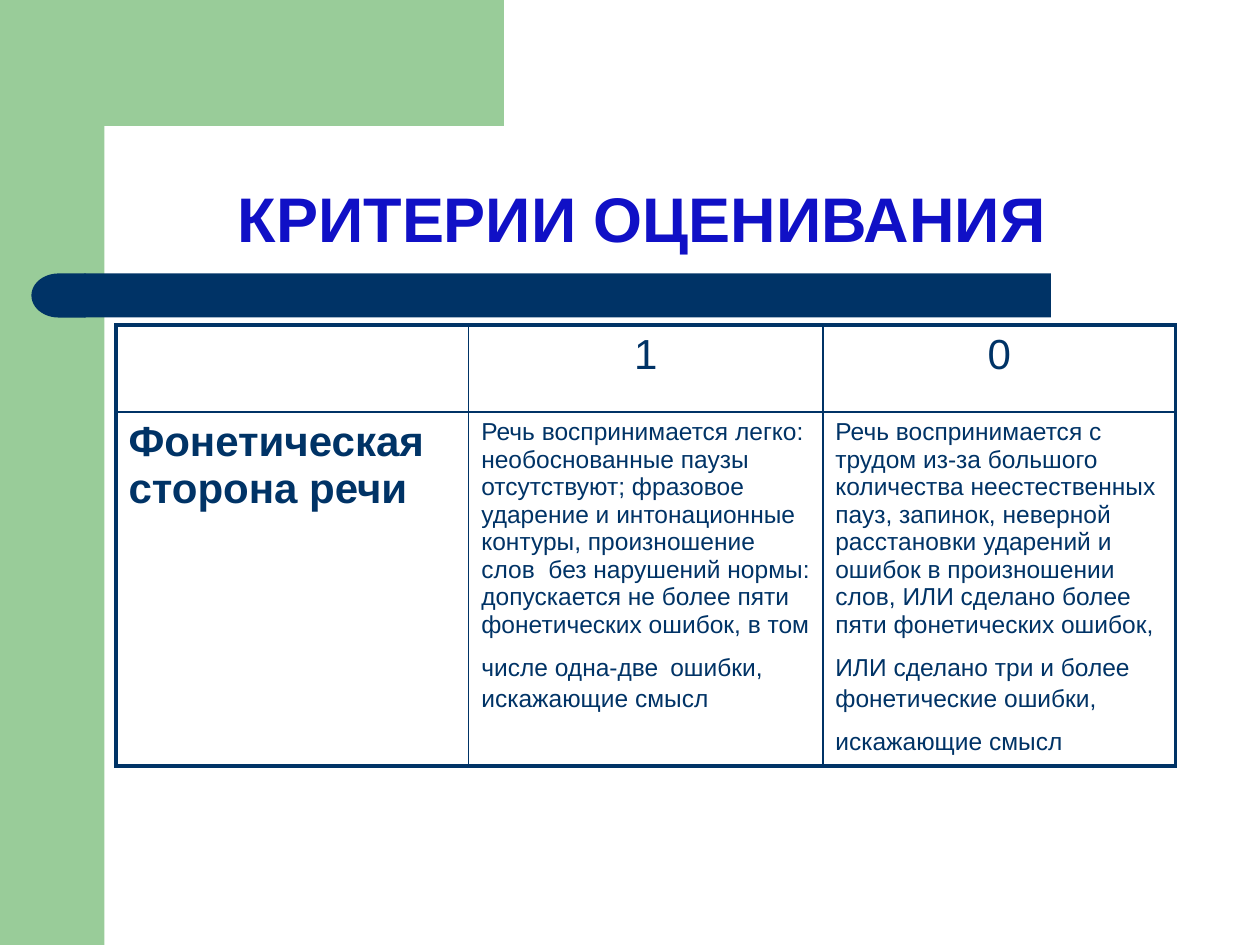
import math
from dataclasses import dataclass

from lxml import etree
from pptx import Presentation
from pptx import util as u
from pptx.dml import color
from pptx.enum import shapes, text
from pptx.oxml import ns

NAVY, GREEN, BLUE = "003366", "99CC99", "1010C6"
THIN, THICK = 1, 2.25
FONT = "Arial"


@dataclass
class Block:
    kind: shapes.MSO_SHAPE
    left: float
    top: float
    width: float
    height: float
    fill: str
    flip: bool = False


@dataclass
class Run:
    words: str
    size: float = 14
    bold: bool = False
    tint: str = NAVY


@dataclass
class Entry:
    runs: list[Run]
    center: bool = False


GAP = Run(" ", 24)
BLOCKS = [
    Block(shapes.MSO_SHAPE.RECTANGLE, 0, 0, 0.83, 7.5, GREEN),
    Block(shapes.MSO_SHAPE.RECTANGLE, 0.67, 2.17, 7.67, 0.35, NAVY),
    Block(shapes.MSO_SHAPE.FLOWCHART_DELAY, 0.25, 2.17, 0.43, 0.35, NAVY, flip=True),
]
WIDTHS = [2.8, 2.81, 2.8]
HEIGHTS = [0.69, 2.04]
ROWS = [
    [Entry([]), Entry([Run("1", 24)], True), Entry([Run("0", 24)], True)],
    [
        Entry([Run("Фонетическая сторона речи", 24, True)]),
        Entry([
            Run("Речь воспринимается легко: необоснованные паузы отсутствуют; "
                "фразовое ударение и интонационные контуры, произношение "
                "слов  без нарушений нормы: допускается не более пяти "
                "фонетических ошибок, в том числе одна-две"),
            GAP,
            Run("ошибки, искажающие смысл"),
        ]),
        Entry([
            Run("Речь воспринимается с трудом из-за большого количества "
                "неестественных пауз, запинок, неверной расстановки ударений "
                "и ошибок в произношении слов, ИЛИ сделано более пяти "
                "фонетических ошибок, ИЛИ сделано три и более"),
            GAP,
            Run("фонетические ошибки, искажающие смысл"),
            GAP,
        ]),
    ],
]


def rgb(code: str) -> color.RGBColor:
    return color.RGBColor.from_string(code)


def paint(shape, code: str) -> None:
    shape.shadow.inherit = False
    shape.fill.solid()
    shape.fill.fore_color.rgb = rgb(code)
    shape.line.fill.background()


def draw_block(slide, block: Block) -> None:
    shape = slide.shapes.add_shape(
        block.kind, u.Inches(block.left), u.Inches(block.top),
        u.Inches(block.width), u.Inches(block.height))
    paint(shape, block.fill)
    if block.flip:
        shape._element.spPr.xfrm.set("flipH", "1")


def draw_corner(slide) -> None:
    """Green band whose inner corner is a quarter circle."""
    edge, rad, steps = 0.83, 0.33, 16
    mid = edge + rad
    turns = [math.pi / 2 * i / steps for i in range(steps + 1)]
    arc = [(mid - rad * math.sin(t), mid - rad * math.cos(t)) for t in turns]
    points = [(3.5, 0), (3.5, edge), *arc, (edge, 1.28), (0.5, 1.28), (0.5, 0)]
    form = slide.shapes.build_freeform(*points[0], scale=u.Inches(1))
    form.add_line_segments(points[1:], close=True)
    paint(form.convert_to_shape(), GREEN)


def add_runs(para, runs: list[Run]) -> None:
    for item in runs:
        run = para.add_run()
        run.text = item.words
        run.font.name = FONT
        run.font.size = u.Pt(item.size)
        run.font.bold = item.bold
        run.font.color.rgb = rgb(item.tint)


def set_title(slide, words: str) -> None:
    title = slide.shapes.title
    title.left, title.top = u.Inches(0.83), u.Inches(0.83)
    title.width, title.height = u.Inches(8.67), u.Inches(1.25)
    frame = title.text_frame
    frame.word_wrap = True
    frame.vertical_anchor = text.MSO_ANCHOR.BOTTOM
    para = frame.paragraphs[0]
    para.alignment = text.PP_ALIGN.CENTER
    para.line_spacing = 0.9
    add_runs(para, [Run(words, 36, True, BLUE)])


def set_edges(cell, widths: dict[str, float]) -> None:
    props = cell._tc.get_or_add_tcPr()
    for spot, (side, width) in enumerate(widths.items()):
        line = etree.Element(ns.qn(f"a:ln{side}"), w=str(u.Pt(width)))
        fill = etree.SubElement(line, ns.qn("a:solidFill"))
        etree.SubElement(fill, ns.qn("a:srgbClr"), val=NAVY)
        props.insert(spot, line)


def fill_cell(cell, entry: Entry) -> None:
    cell.fill.background()
    para = cell.text_frame.paragraphs[0]
    para.alignment = text.PP_ALIGN.CENTER if entry.center else text.PP_ALIGN.LEFT
    # Space before as a share of the line
    space = etree.SubElement(para._p.get_or_add_pPr(), ns.qn("a:spcBef"))
    etree.SubElement(space, ns.qn("a:spcPct"), val="20000")
    add_runs(para, entry.runs)


def draw_table(slide) -> None:
    table = slide.shapes.add_table(
        len(HEIGHTS), len(WIDTHS), u.Inches(0.92), u.Inches(2.58),
        u.Inches(sum(WIDTHS)), u.Inches(sum(HEIGHTS))).table
    table.first_row = table.horz_banding = False
    for col, width in zip(table.columns, WIDTHS):
        col.width = u.Inches(width)
    for row, height in zip(table.rows, HEIGHTS):
        row.height = u.Inches(height)
    end_r, end_c = len(HEIGHTS) - 1, len(WIDTHS) - 1
    for r, row in enumerate(ROWS):
        for c, entry in enumerate(row):
            cell = table.cell(r, c)
            fill_cell(cell, entry)
            # Thick frame outside, thin lines inside
            outer = {"L": c == 0, "R": c == end_c, "T": r == 0, "B": r == end_r}
            set_edges(cell, {s: THICK if out else THIN for s, out in outer.items()})


def main() -> None:
    deck = Presentation()
    deck.slide_width, deck.slide_height = u.Inches(10), u.Inches(7.5)
    slide = deck.slides.add_slide(deck.slide_layouts[5])
    # Backdrop
    for block in BLOCKS:
        draw_block(slide, block)
    draw_corner(slide)
    # Content
    set_title(slide, "КРИТЕРИИ ОЦЕНИВАНИЯ ")
    draw_table(slide)
    deck.save("out.pptx")


if __name__ == "__main__":
    main()
